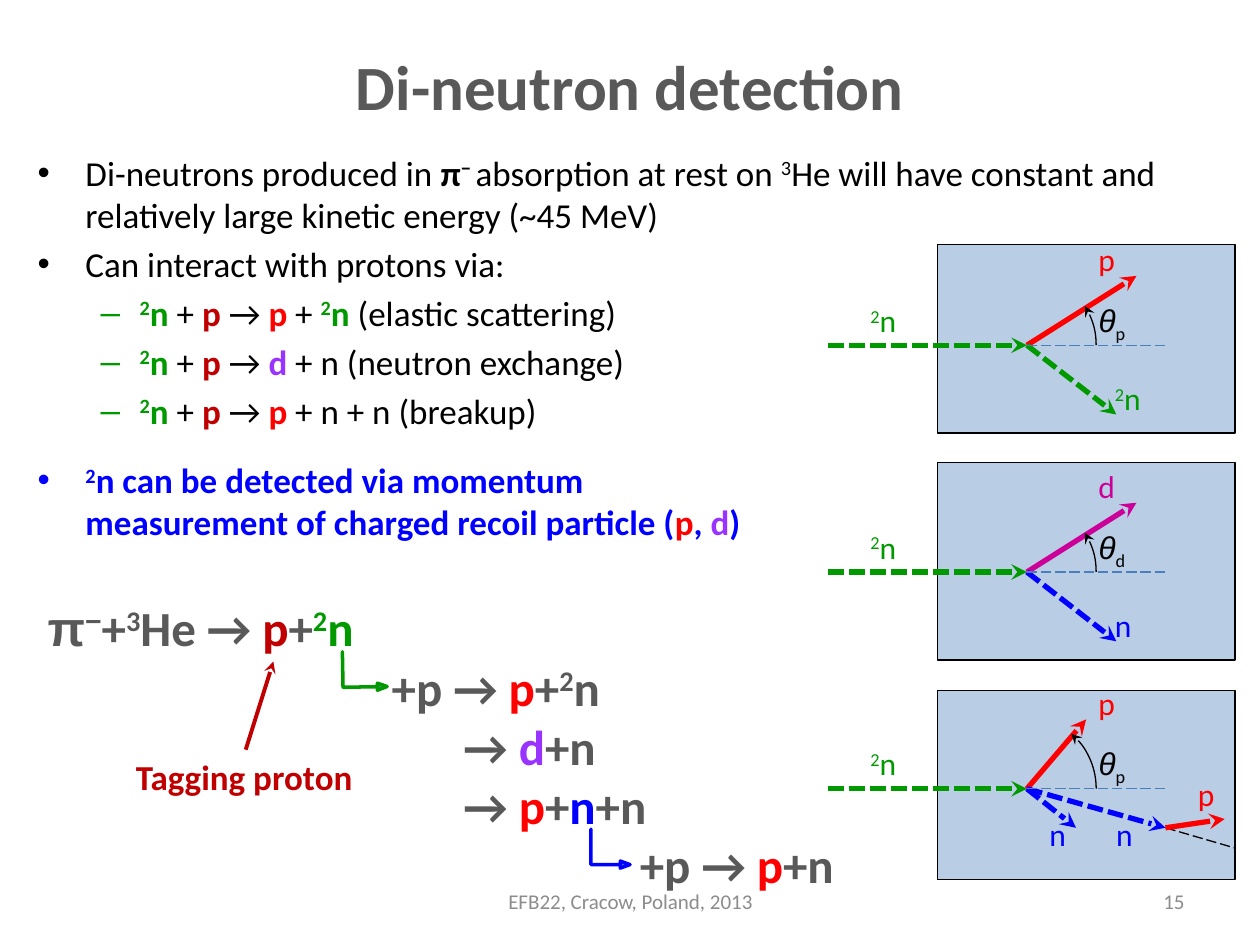
from lxml import etree
from pptx import Presentation
from pptx.dml.color import RGBColor
from pptx.enum.dml import MSO_LINE
from pptx.enum.shapes import MSO_CONNECTOR, MSO_SHAPE
from pptx.enum.text import MSO_ANCHOR, MSO_AUTO_SIZE, PP_ALIGN
from pptx.oxml.ns import qn
from pptx.util import Inches, Pt

COLUMNS, ROWS, CELL = 10, 7.5, Inches(1)
SHORT, LONG = MSO_LINE.SQUARE_DOT, MSO_LINE.LONG_DASH
STRAIGHT = MSO_CONNECTOR.STRAIGHT
RECTANGLE, ARC, BENT = MSO_SHAPE.RECTANGLE, MSO_SHAPE.ARC, MSO_SHAPE.BENT_UP_ARROW
LEFT, CENTER, RIGHT = PP_ALIGN.LEFT, PP_ALIGN.CENTER, PP_ALIGN.RIGHT
TOP, MIDDLE = MSO_ANCHOR.TOP, MSO_ANCHOR.MIDDLE
FIT = MSO_AUTO_SIZE.SHAPE_TO_FIT_TEXT

BLACK, GRAY, PALE = "000000", "595959", "8C8C8C"
GREEN, RED, DARK_RED, BLUE = "009900", "FF0000", "C00000", "0000FF"
PURPLE, MAGENTA, PANEL, AXIS, ACCENT = "9933FF", "CC0099", "B9CDE5", "4B7EBC", "4F81BD"


def color(code):
    """Turn a hex string into a colour."""
    return RGBColor.from_string(code)


def grid(*cells):
    """Turn grid columns and rows into lengths."""
    return [round(cell * CELL) for cell in cells]


def write(para, spans, size):
    """Fill a paragraph with (text, colour, style) spans: b, i, a for Arial, ^ and _."""
    for text, code, style in spans:
        span = para.add_run()
        span.text = text
        span.font.size = Pt(size)
        span.font.name = "Arial" if "a" in style else "Calibri"
        span.font.color.rgb = color(code)
        span.font.bold = "b" in style
        span.font.italic = "i" in style
        if "^" in style or "_" in style:
            span.font._element.set("baseline", "30000" if "^" in style else "-25000")


def text_box(page, box, lines, size, align=LEFT, anchor=TOP, wrap=True):
    """Place a text box holding one paragraph for each list of spans."""
    holder = page.shapes.add_textbox(*grid(*box))
    frame = holder.text_frame
    frame.word_wrap = wrap
    frame.vertical_anchor = anchor
    if not wrap:
        frame.auto_size = FIT
    for number, spans in enumerate(lines):
        para = frame.add_paragraph() if number else frame.paragraphs[0]
        para.alignment = align
        write(para, spans, size)
    return holder


def indent(para, margin, hanging=0, mark=None):
    """Indent a paragraph and give it a bullet mark."""
    props = para._p.get_or_add_pPr()
    props.set("marL", str(round(margin * CELL)))
    props.set("indent", str(round(-hanging * CELL)))
    if mark:
        para.space_before = Pt(4)
        etree.SubElement(props, qn("a:buFont")).set("typeface", "Arial")
        etree.SubElement(props, qn("a:buChar")).set("char", mark)


def bullets(page, box, items):
    """Place a bulleted list of (level, spans) items."""
    holder = text_box(page, box, [spans for _, spans in items], 20)
    for para, (level, _) in zip(holder.text_frame.paragraphs, items):
        indent(para, *[(0.38, 0.38, "•"), (0.81, 0.31, "–")][level])


def stroke(shape, code, width, dash=None, end=None):
    """Style an outline, with a stealth arrowhead at the named end."""
    shape.line.color.rgb = color(code)
    shape.line.width = Pt(width)
    if dash:
        shape.line.dash_style = dash
    if end:
        etree.SubElement(shape.line._get_or_add_ln(), qn(f"a:{end}")).set("type", "stealth")


def ray(page, start, shift, code, width=3, dash=None, end="tailEnd"):
    """Draw a straight line from a start point by a shift."""
    stop = (start[0] + shift[0], start[1] + shift[1])
    line = page.shapes.add_connector(STRAIGHT, *grid(*start, *stop))
    stroke(line, code, width, dash, end)
    etree.SubElement(line._element.spPr, qn("a:effectLst"))
    return line


def preset(page, kind, box, fill=None):
    """Place a preset shape without a shadow."""
    shape = page.shapes.add_shape(kind, *grid(*box))
    shape.shadow.inherit = False
    if fill:
        shape.fill.solid()
        shape.fill.fore_color.rgb = color(fill)
    else:
        shape.fill.background()
    return shape


def label(page, origin, shift, spans):
    """Place a small particle label at a shift from an origin."""
    width = 0.34 if len(spans) == 1 else 0.42
    box = (origin[0] + shift[0], origin[1] + shift[1], width, 0.4)
    text_box(page, box, [spans], 18, wrap=False)


def dineutron(code, style=""):
    """Give the spans of the di-neutron symbol."""
    return [("2", code, style + "^"), ("n", code, style)]


def detector(page, box, drop, recoil, code, tip, opening, neutrons):
    """Draw one scattering panel around a vertex lying below the panel's top."""
    stroke(preset(page, RECTANGLE, box, PANEL), BLACK, 1)
    vertex = (box[0] + 0.71, box[1] + drop)
    ray(page, (vertex[0] - 1.58, vertex[1]), (1.58, 0), GREEN, dash=SHORT)
    ray(page, vertex, tip, code)
    for spans, shift, place in neutrons:
        ray(page, vertex, shift, spans[0][1], dash=SHORT)
        label(page, vertex, place, spans)
    ray(page, vertex, (1.1, 0), AXIS, 0.75, LONG, None)
    arc = preset(page, ARC, (vertex[0] - 0.47, vertex[1] - 0.55, 1.02, 1.1))
    arc.adjustments[0], arc.adjustments[1] = opening, 0
    stroke(arc, BLACK, 0.75, end="headEnd")
    label(page, vertex, (-1.34, -0.4), dineutron(GREEN))
    label(page, vertex, (0.47, -0.88), [(recoil, code, "")])
    label(page, vertex, (0.47, -0.4), [("θ", BLACK, "ai"), (recoil, BLACK, "_")])


def rescattering(page, start):
    """Draw the second scattering of a breakup neutron."""
    ray(page, start, (0.55, 0.16), BLACK, 0.75, LONG, None)
    ray(page, start, (0.47, -0.07), RED)
    label(page, start, (0.16, -0.47), [("p", RED, "")])


def bent_arrow(page, box, code, turn):
    """Draw a thin arrow that goes down and then right."""
    arrow = preset(page, BENT, box, ACCENT)
    for number, value in enumerate((0, 0.09, 0.25)):
        arrow.adjustments[number] = value
    arrow.rotation = turn
    stroke(arrow, code, 2)


def reaction_chain(page, box):
    """Write the chain of reactions with its arrows and the tagging label."""
    left, top, width, height = box
    capture = [("π", GRAY, "ab"), ("−", GRAY, "ab^"), ("+", GRAY, "b"), ("3", GRAY, "b^"),
               ("He → ", GRAY, "b"), ("p", DARK_RED, "b"), ("+", GRAY, "b")]
    text_box(page, (left, top, 4.57, 0.71), [capture + dineutron(GREEN, "b")], 28)
    proton = ("p", RED, "b")
    steps = [
        (0.29, [("+p → ", GRAY, "b"), proton, ("+", GRAY, "b")] + dineutron(GRAY, "b")),
        (0.86, [("→ ", GRAY, "b"), ("d", PURPLE, "b"), ("+n", GRAY, "b")]),
        (0.86, [("→ ", GRAY, "b"), proton, ("+", GRAY, "b"), ("n", BLUE, "b"),
                ("+n", GRAY, "b")]),
        (2.26, [("+p → ", GRAY, "b"), proton, ("+n", GRAY, "b")])]
    chain = text_box(page, (left + 2.44, top + 0.48, width - 2.44, height - 0.48),
                     [spans for _, spans in steps], 28)
    for para, (margin, _) in zip(chain.text_frame.paragraphs, steps):
        indent(para, margin)
    bent_arrow(page, (left + 2.46, top + 0.46, 0.31, 0.35), GREEN, 89)
    bent_arrow(page, (left + 4.41, top + 1.89, 0.31, 0.31), BLUE, 90)
    tag = text_box(page, (left + 0.7, top + 1.26, 1.94, 0.44),
                   [[("Tagging proton", DARK_RED, "b")]], 20, wrap=False)
    pointer = ray(page, (left + 1.67, top + 1.26), (0.22, -0.7), DARK_RED, 2.25)
    pointer.begin_connect(tag, 0)


def channel(products):
    """Give a second-level item for one reaction of the di-neutron with a proton."""
    entry = [(" + ", BLACK, ""), ("p ", DARK_RED, "b"), ("→ ", BLACK, "")]
    return 1, dineutron(GREEN, "b") + entry + products


def main():
    """Build the slide and save it."""
    deck = Presentation()
    deck.slide_width, deck.slide_height = grid(COLUMNS, ROWS)
    page = deck.slides.add_slide(deck.slide_layouts[6])
    text_box(page, (0.51, 0.21, 8.98, 0.93), [[("Di-neutron detection", GRAY, "b")]],
             36, CENTER, MIDDLE)
    bullets(page, (0.2, 1.15, 9.61, 2.44), [
        (0, [("Di-neutrons produced in ", BLACK, ""), ("π", BLACK, "b"), ("− ", BLACK, "b^"),
             ("absorption at rest on ", BLACK, ""), ("3", BLACK, "^"),
             ("He will have constant and relatively large kinetic energy (~45 MeV)", BLACK, "")]),
        (0, [("Can interact with protons via:", BLACK, "")]),
        channel([("p", RED, "b"), (" + ", BLACK, "")] + dineutron(GREEN, "b")
                + [(" (elastic scattering)", BLACK, "")]),
        channel([("d", PURPLE, "b"), (" + n (neutron exchange)", BLACK, "")]),
        channel([("p", RED, "b"), (" + n + n (breakup)", BLACK, "")])])
    neutron = [("n", BLUE, "")]
    detector(page, (7.44, 1.94, 2.36, 1.5), 0.8, "p", RED, (0.87, -0.55), 194.16,
             [(dineutron(GREEN), (0.71, 0.55), (0.6, 0.22))])
    detector(page, (7.44, 3.67, 2.36, 1.57), 0.87, "d", MAGENTA, (0.87, -0.55), 194.16,
             [(neutron, (0.71, 0.55), (0.6, 0.22))])
    detector(page, (7.44, 5.48, 2.36, 1.5), 0.78, "p", RED, (0.47, -0.55), 183.46,
             [(neutron, (1.1, 0.31), (0.61, 0.16)), (neutron, (0.39, 0.31), (0.08, 0.16))])
    rescattering(page, (9.25, 6.57))
    bullets(page, (0.2, 3.59, 5.98, 0.87), [
        (0, [("2", BLUE, "b^"),
             ("n can be detected via momentum measurement of charged recoil particle (", BLUE, "b"),
             ("p", RED, "b"), (", ", BLUE, "b"), ("d", PURPLE, "b"), (")", BLUE, "b")])])
    reaction_chain(page, (0.28, 4.69, 7.56, 2.45))
    text_box(page, (7.17, 6.95, 2.33, 0.4), [[("15", PALE, "")]], 12, RIGHT, MIDDLE)
    text_box(page, (3.42, 6.95, 3.17, 0.4), [[("EFB22, Cracow, Poland, 2013", PALE, "")]],
             12, CENTER, MIDDLE)
    deck.save("out.pptx")


if __name__ == "__main__":
    main()
